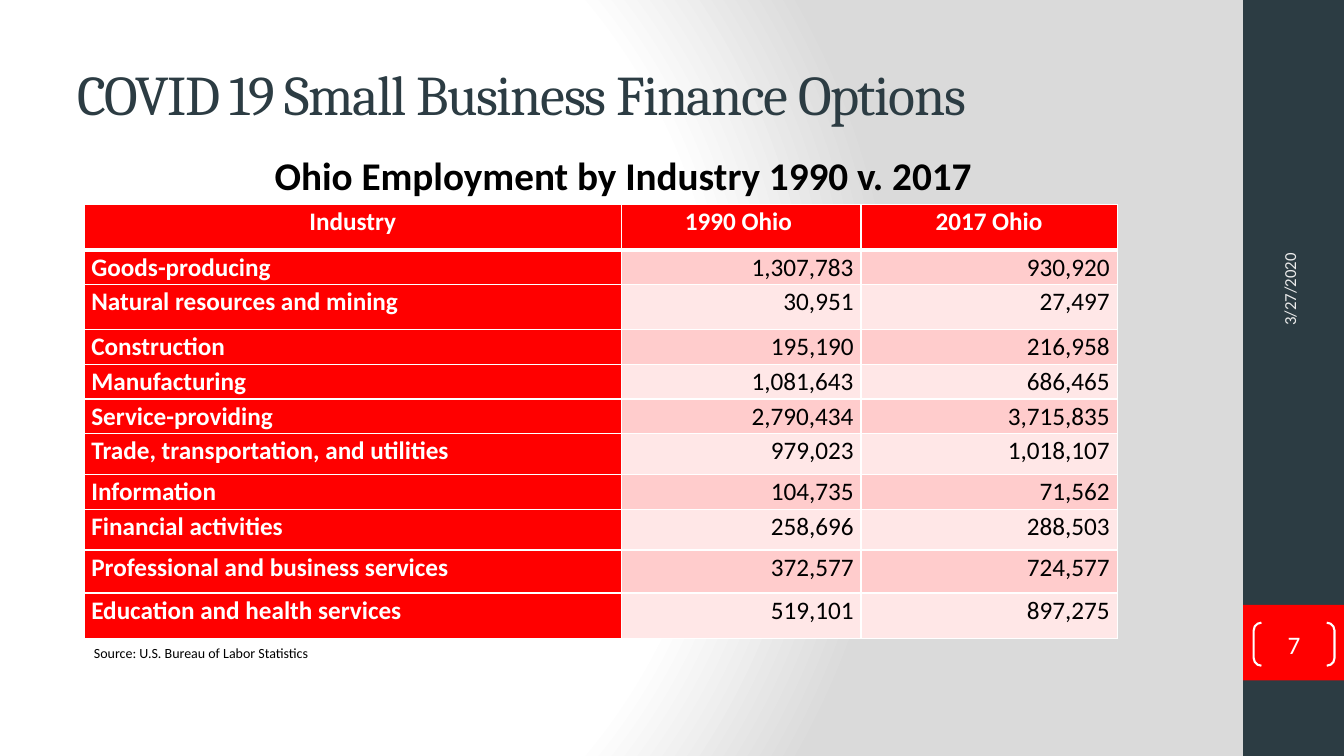
"""Build the Ohio employment by industry slide."""
from lxml.etree import SubElement
from pptx import Presentation
from pptx.dml.color import RGBColor
from pptx.enum.shapes import MSO_SHAPE
from pptx.enum.text import MSO_ANCHOR, MSO_AUTO_SIZE, PP_ALIGN
from pptx.oxml import parse_xml
from pptx.oxml.ns import nsdecls, qn
from pptx.util import Pt

PX = 9525
THEME = {
    "slate": "2C3C43", "red": "FF0000", "white": "FFFFFF", "black": "000000",
    "date": "EBEBEB", "backdrop": "DADADA", "bands": ["FFCCCC", "FFE7E7"],
    "title_font": "Cambria", "body_font": "Calibri",
    "title_size": 40, "heading_size": 28, "table_size": 18, "date_size": 12, "source_size": 10,
}
ROWS = [
    (43, "Industry", "1990 Ohio ", "2017 Ohio"),
    (33, "Goods-producing", "1,307,783", "930,920"),
    (43, "Natural resources and mining", "30,951", "27,497"),
    (33, "Construction", "195,190", "216,958"),
    (33, "Manufacturing", "1,081,643", "686,465"),
    (33, "Service-providing", "2,790,434", "3,715,835"),
    (39, "Trade, transportation, and utilities", "979,023", "1,018,107"),
    (33, "Information", "104,735", "71,562"),
    (39, "Financial activities", "258,696", "288,503"),
    (41, "Professional and business services", "372,577", "724,577"),
    (43, "Education and health services", "519,101", "897,275"),
]
COLUMN_WIDTHS = [512, 228, 244]


def px(*lengths):
    return [length * PX for length in lengths]


def write(frame, text, size, color, bold=False, align=PP_ALIGN.LEFT, font=THEME["body_font"]):
    frame.text = text
    para = frame.paragraphs[0]
    para.alignment = align
    span = para.runs[0]
    span.font.name = font
    span.font.size = Pt(THEME[size])
    span.font.bold = bold
    span.font.color.rgb = RGBColor.from_string(THEME[color])
    return para


deck = Presentation()
deck.slide_width, deck.slide_height = px(1280, 720)
page = deck.slides.add_slide(deck.slide_layouts[5])

page.background.fill.solid()
background = page.background.fill._xPr
background.replace(background.find(qn("a:solidFill")), parse_xml(
    f'<a:gradFill {nsdecls("a")} rotWithShape="1"><a:gsLst>'
    + "".join(f'<a:gs pos="{stop}000"><a:srgbClr val="{THEME[color]}"/></a:gs>'
              for stop, color in [(0, "white"), (75, "white"), (100, "backdrop")])
    + '</a:gsLst><a:path path="circle">'
      '<a:fillToRect l="20000" t="50000" r="100000" b="50000"/></a:path></a:gradFill>'))

for color, bounds in [("slate", (1184, 0, 96, 720)), ("red", (1184, 576, 96, 72))]:
    band = page.shapes.add_shape(MSO_SHAPE.RECTANGLE, *px(*bounds))
    band.shadow.inherit = False
    band.fill.solid()
    band.fill.fore_color.rgb = RGBColor.from_string(THEME[color])
    band.line.fill.background()

title = page.shapes.title
title.left, title.top, title.width, title.height = px(64, 29, 1067, 120)
title.text_frame.vertical_anchor = MSO_ANCHOR.MIDDLE
title_para = write(title.text_frame, "COVID 19 Small Business Finance Options",
                   "title_size", "slate", font=THEME["title_font"])
title_para.runs[0].font._element.set("spc", "-100")

table_frame = page.shapes.add_table(len(ROWS), len(COLUMN_WIDTHS), *px(
    80, 195, sum(COLUMN_WIDTHS), sum(row[0] for row in ROWS)))
table = table_frame.table
table.horz_banding = False
for column, width in zip(table.columns, COLUMN_WIDTHS):
    column.width = width * PX
for row_index, (height, *texts) in enumerate(ROWS):
    table.rows[row_index].height = height * PX
    for column_index, text in enumerate(texts):
        cell = table.cell(row_index, column_index)
        cell.margin_left, cell.margin_right, cell.margin_top, cell.margin_bottom = px(7, 7, 0, 0)
        label = row_index == 0 or column_index == 0
        if row_index == 0:
            align = PP_ALIGN.CENTER
        else:
            align = PP_ALIGN.LEFT if label else PP_ALIGN.RIGHT
        para = write(cell.text_frame, text, "table_size", "white" if label else "black", label, align)
        para.line_spacing = 1.07
        for side in "LRTB":
            heavy = (row_index, side) in [(0, "B"), (1, "T")]
            edge = SubElement(cell._tc.get_or_add_tcPr(), qn(f"a:ln{side}"), w=str(Pt(3 if heavy else 1)))
            SubElement(SubElement(edge, qn("a:solidFill")), qn("a:srgbClr"), val=THEME["white"])
        cell.fill.solid()
        cell.fill.fore_color.rgb = RGBColor.from_string(
            THEME["red"] if label else THEME["bands"][(row_index - 1) % 2])

date = page.shapes.add_textbox(*px(1100, 166, 256, 51))
date.rotation = 270
date.text_frame.word_wrap = True
date.text_frame.vertical_anchor = MSO_ANCHOR.MIDDLE
write(date.text_frame, "3/27/2020", "date_size", "date")

number = page.shapes.add_shape(MSO_SHAPE.DOUBLE_BRACKET, *px(1194, 593, 77, 41))
number.shadow.inherit = False
number.adjustments[0] = 0.18
number.fill.background()
number.line.color.rgb = RGBColor.from_string(THEME["white"])
number.line.width = Pt(1.5)
frame = number.text_frame
frame.margin_left = frame.margin_right = frame.margin_top = frame.margin_bottom = 0
frame.vertical_anchor = MSO_ANCHOR.MIDDLE
write(frame, "7", "table_size", "white", align=PP_ALIGN.CENTER)

for text, bounds, size, bold in [
    ("Ohio Employment by Industry 1990 v. 2017", (252, 139, 691, 55), "heading_size", True),
    ("Source: U.S. Bureau of Labor Statistics", (80, 609, 228, 26), "source_size", False),
]:
    box = page.shapes.add_textbox(*px(*bounds))
    box.text_frame.word_wrap = not bold
    box.text_frame.auto_size = MSO_AUTO_SIZE.SHAPE_TO_FIT_TEXT
    write(box.text_frame, text, size, "black", bold)

deck.save("out.pptx")
